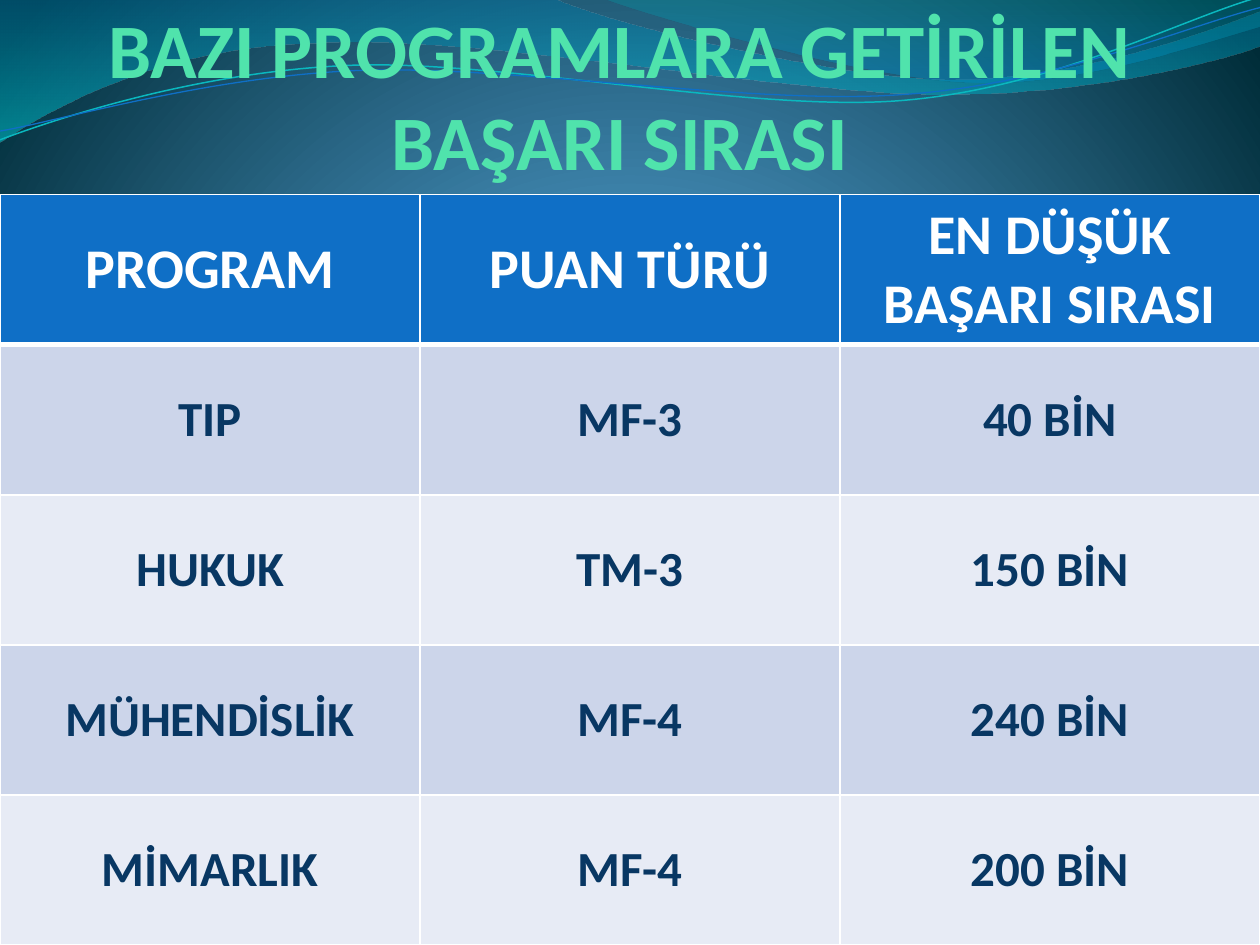
from lxml import etree
from pptx import Presentation
from pptx.dml.color import RGBColor
from pptx.enum.text import MSO_ANCHOR, MSO_AUTO_SIZE, PP_ALIGN
from pptx.oxml import parse_xml
from pptx.oxml.ns import nsdecls, qn
from pptx.util import Pt

CENTER = PP_ALIGN.CENTER
MIDDLE = MSO_ANCHOR.MIDDLE
NO_AUTOFIT = MSO_AUTO_SIZE.NONE

FONT = "Calibri"
WHITE = RGBColor(0xFF, 0xFF, 0xFF)
MINT = RGBColor(0x50, 0xE3, 0xAC)
BLUE = RGBColor(0x0F, 0x6F, 0xC6)
TEAL = RGBColor(0x0A, 0xB8, 0xBF)
NAVY = RGBColor(0x08, 0x37, 0x63)
BANDS = (RGBColor(0xCC, 0xD5, 0xEA), RGBColor(0xE7, 0xEB, 0xF5))

# Gradient stops: position %, colour, opacity %
BACKGROUND_STOPS = [(0, RGBColor(0x4A, 0xA0, 0xD6), 100),
                    (25, RGBColor(0x4C, 0x98, 0xC7), 100),
                    (100, RGBColor(0x00, 0x2C, 0x38), 100)]
BROAD_STOPS = [(0, RGBColor(0x00, 0x74, 0xA1), 45),
               (100, RGBColor(0x00, 0xC6, 0xCF), 55)]
NARROW_STOPS = [(0, RGBColor(0x00, 0xA1, 0xA9), 30),
                (80, RGBColor(0x00, 0x8B, 0xBF), 45)]
RADIAL = ('<a:path path="circle">'
          '<a:fillToRect l="10000" t="110000" r="10000" b="100000"/></a:path>')
DOWNWARD = '<a:lin ang="5400000" scaled="1"/>'

# Outlines in points: two numbers end a straight segment, six a Bezier one
BROAD_WAVE = [(0, 0), (316.8, -0.7),
              (342.7, 12.2, 478.1, 45.4, 545.8, 45.4),
              (614.2, 45.4, 689.8, 18.7, 720, 6.5), (720.7, 25.9),
              (707.8, 31.7, 626.4, 54.7, 537.1, 54),
              (447.8, 54, 275, 20.2, 185, 24.5),
              (92.9, 25.9, 33.1, 59.8, -0.7, 81.4)]
NARROW_WAVE = [(344.9, -0.7), (366.5, 7.9, 491, 44.6, 553.7, 46.8),
               (616.3, 49.7, 691.9, 23, 720, 15.1), (720, 0)]
TEAL_CURVE = [(0, 79.9), (34.6, 67, 113.8, 41, 199.4, 37.4),
              (284.4, 33.8, 427, 64.1, 513.4, 57.6),
              (599.8, 51.1, 675.4, 10.8, 718.6, -1.4)]
BLUE_CURVE = [(0, 74.9), (33.8, 69.1, 118.1, 43.9, 203.8, 40.3),
              (290.2, 36.7, 429.8, 60.5, 516.2, 54),
              (601.9, 48.2, 677.5, 15.1, 720, 4.3)]

TITLE = "BAZI PROGRAMLARA GETİRİLEN BAŞARI SIRASI"
ROWS = [("PROGRAM", "PUAN TÜRÜ", "EN DÜŞÜK BAŞARI SIRASI"),
        ("TIP", "MF-3", "40 BİN"),
        ("HUKUK", "TM-3", "150 BİN"),
        ("MÜHENDİSLİK", "MF-4", "240 BİN"),
        ("MİMARLIK", "MF-4", "200 BİN")]


def set_gradient(holder, stops, direction):
    """Replace the solid fill inside holder with a gradient."""
    gs = "".join(
        f'<a:gs pos="{pos * 1000}"><a:srgbClr val="{color}">'
        f'<a:alpha val="{opacity * 1000}"/></a:srgbClr></a:gs>'
        for pos, color, opacity in stops)
    holder.replace(holder.find(qn("a:solidFill")), parse_xml(
        f'<a:gradFill {nsdecls("a")} rotWithShape="1">'
        f'<a:gsLst>{gs}</a:gsLst>{direction}</a:gradFill>'))


def add_outline(s, left, top, outline, close):
    """Build a freeform, then merge each Bezier segment's three points."""
    points = [(left + Pt(x), top + Pt(y))
              for seg in outline for x, y in zip(seg[::2], seg[1::2])]
    builder = s.shapes.build_freeform(*points[0])
    builder.add_line_segments(points[1:], close=close)
    sp = builder.convert_to_shape()
    sp.shadow.inherit = False
    lines = iter(list(sp.element.iter(qn("a:lnTo"))))
    for seg in outline[1:]:
        first = next(lines)
        if len(seg) == 6:
            first.tag = qn("a:cubicBezTo")
            for _ in range(2):
                extra = next(lines)
                first.append(extra[0])
                extra.getparent().remove(extra)
    return sp


def add_waves(s, left, top):
    for outline, stops in ((BROAD_WAVE, BROAD_STOPS), (NARROW_WAVE, NARROW_STOPS)):
        sp = add_outline(s, left, top, outline, True)
        sp.line.fill.background()
        sp.fill.solid()
        set_gradient(sp.element.spPr, stops, DOWNWARD)
    for outline, color, width in ((TEAL_CURVE, TEAL, 0.85), (BLUE_CURVE, BLUE, 0.75)):
        sp = add_outline(s, left, top, outline, False)
        sp.fill.background()
        sp.line.color.rgb = color
        sp.line.width = Pt(width)


def write(tf, text, size, color):
    p = tf.paragraphs[0]
    p.alignment = CENTER
    r = p.add_run()
    r.text = text
    for name, value in {"name": FONT, "size": Pt(size), "bold": True}.items():
        setattr(r.font, name, value)
    r.font.color.rgb = color


def add_title(s, left, top, width, height):
    title = s.shapes.title
    s.shapes.element.append(title.element)  # in front of the waves
    title.left, title.top, title.width, title.height = left, top, width, height
    tf = title.text_frame
    layout = {"margin_left": 0, "margin_top": 0, "margin_right": 0, "margin_bottom": 0,
              "vertical_anchor": MIDDLE, "word_wrap": True, "auto_size": NO_AUTOFIT}
    for name, value in layout.items():
        setattr(tf, name, value)
    write(tf, TITLE, 44, MINT)


def set_borders(cell, widths):
    tc_pr = cell._tc.get_or_add_tcPr()
    for side, width in widths.items():
        ln = etree.SubElement(tc_pr, qn(f"a:ln{side}"), w=str(Pt(width)))
        fill = etree.SubElement(ln, qn("a:solidFill"))
        etree.SubElement(fill, qn("a:srgbClr"), val=str(WHITE))


def add_ranking_table(s, left, top, width, height):
    table = s.shapes.add_table(len(ROWS), len(ROWS[0]), left, top, width, height).table
    for i, texts in enumerate(ROWS):
        header = i == 0
        for j, text in enumerate(texts):
            cell = table.cell(i, j)
            cell.vertical_anchor = MIDDLE
            set_borders(cell, {"L": 1, "R": 1, "T": 3 if i == 1 else 1,
                               "B": 3 if header else 1})
            cell.fill.solid()
            cell.fill.fore_color.rgb = BLUE if header else BANDS[(i - 1) % 2]
            write(cell.text_frame, text, 32 if header else 28, WHITE if header else NAVY)


def main():
    prs = Presentation()
    prs.slide_width, prs.slide_height = Pt(720), Pt(540)
    s = prs.slides.add_slide(prs.slide_layouts[5])
    s.background.fill.solid()
    set_gradient(s.element.find(".//" + qn("p:bgPr")), BACKGROUND_STOPS, RADIAL)
    add_waves(s, Pt(0), Pt(0))
    add_title(s, Pt(48.25), Pt(0), Pt(612), Pt(107))
    add_ranking_table(s, Pt(0), Pt(111.3), Pt(720), Pt(428.6))
    prs.save("out.pptx")


if __name__ == "__main__":
    main()
